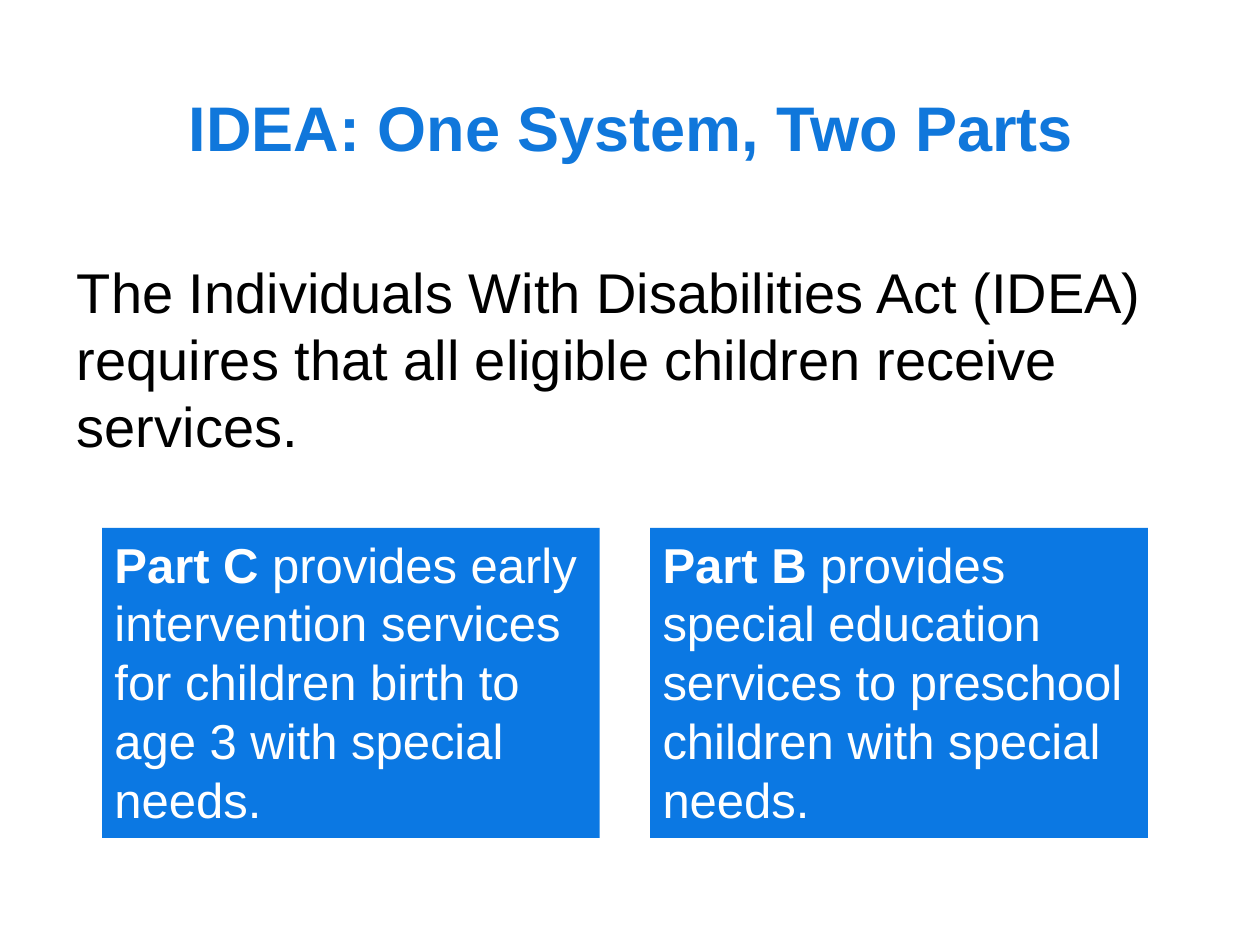
from pptx import Presentation
from pptx.dml.color import RGBColor
from pptx.enum.shapes import MSO_SHAPE
from pptx.enum.text import MSO_ANCHOR, PP_ALIGN
from pptx.util import Inches, Pt

RECT = MSO_SHAPE.RECTANGLE
TOP, MIDDLE = MSO_ANCHOR.TOP, MSO_ANCHOR.MIDDLE
LEFT, CENTER = PP_ALIGN.LEFT, PP_ALIGN.CENTER

# Content
TITLE = "IDEA: One System, Two Parts"
INTRO = ("The Individuals With Disabilities Act (IDEA) requires that all "
         "eligible children receive services.")
PARTS = [
    ("Part C ", "provides early intervention services for children birth "
                "to age 3 with special needs."),
    ("Part B ", "provides special education services to preschool children "
                "with special needs."),
]

THEME = {
    "font": "Arial",
    "title": (36, RGBColor(0x10, 0x77, 0xDB)),
    "body": (32, RGBColor(0, 0, 0)),
    "card": (28, RGBColor(0xFF, 0xFF, 0xFF)),
    "fill": RGBColor(0x0B, 0x78, 0xE3),
}

# Layout in inches
CARD_X, CARD_Y, CARD_W, CARD_H, GAP = 0.81, 4.19, 3.95, 2.46, 0.4


def place(shape, x, y, w, h):
    shape.left, shape.top = Inches(x), Inches(y)
    shape.width, shape.height = Inches(w), Inches(h)


def style(para, role, align):
    size, color = THEME[role]
    para.alignment = align
    para.space_before = Pt(0)
    para.font.name = THEME["font"]
    para.font.size = Pt(size)
    para.font.color.rgb = color


deck = Presentation()
deck.slide_width, deck.slide_height = Inches(10), Inches(7.5)
slide = deck.slides.add_slide(deck.slide_layouts[1])

# Title
title = slide.shapes.title
place(title, 0.51, 0.38, 9, 1.25)
title.text_frame.text = TITLE
title.text_frame.vertical_anchor = MIDDLE
head = title.text_frame.paragraphs[0]
style(head, "title", CENTER)
head.font.bold = True

# Introduction, without a bullet
body = slide.placeholders[1]
place(body, 0.51, 1.84, 9, 4.95)
frame = body.text_frame
frame.text = INTRO
frame.vertical_anchor = TOP
frame.margin_top = Inches(0.2)
intro = frame.paragraphs[0]
props = intro._p.get_or_add_pPr()
props.set("marL", "0")
props.set("indent", "0")
props.insert_element_before(props.makeelement(
    "{http://schemas.openxmlformats.org/drawingml/2006/main}buNone", {}),
    "a:tabLst", "a:defRPr", "a:extLst")
style(intro, "body", LEFT)

# One card for each part
for i, (name, text) in enumerate(PARTS):
    card = slide.shapes.add_shape(
        RECT, Inches(CARD_X + i * (CARD_W + GAP)), Inches(CARD_Y),
        Inches(CARD_W), Inches(CARD_H))
    card.shadow.inherit = False
    card.fill.solid()
    card.fill.fore_color.rgb = THEME["fill"]
    card.line.fill.background()
    frame = card.text_frame
    frame.word_wrap = True
    frame.vertical_anchor = TOP
    para = frame.paragraphs[0]
    style(para, "card", LEFT)
    lead = para.add_run()
    lead.text = name
    lead.font.bold = True
    para.add_run().text = text

deck.save("out.pptx")
